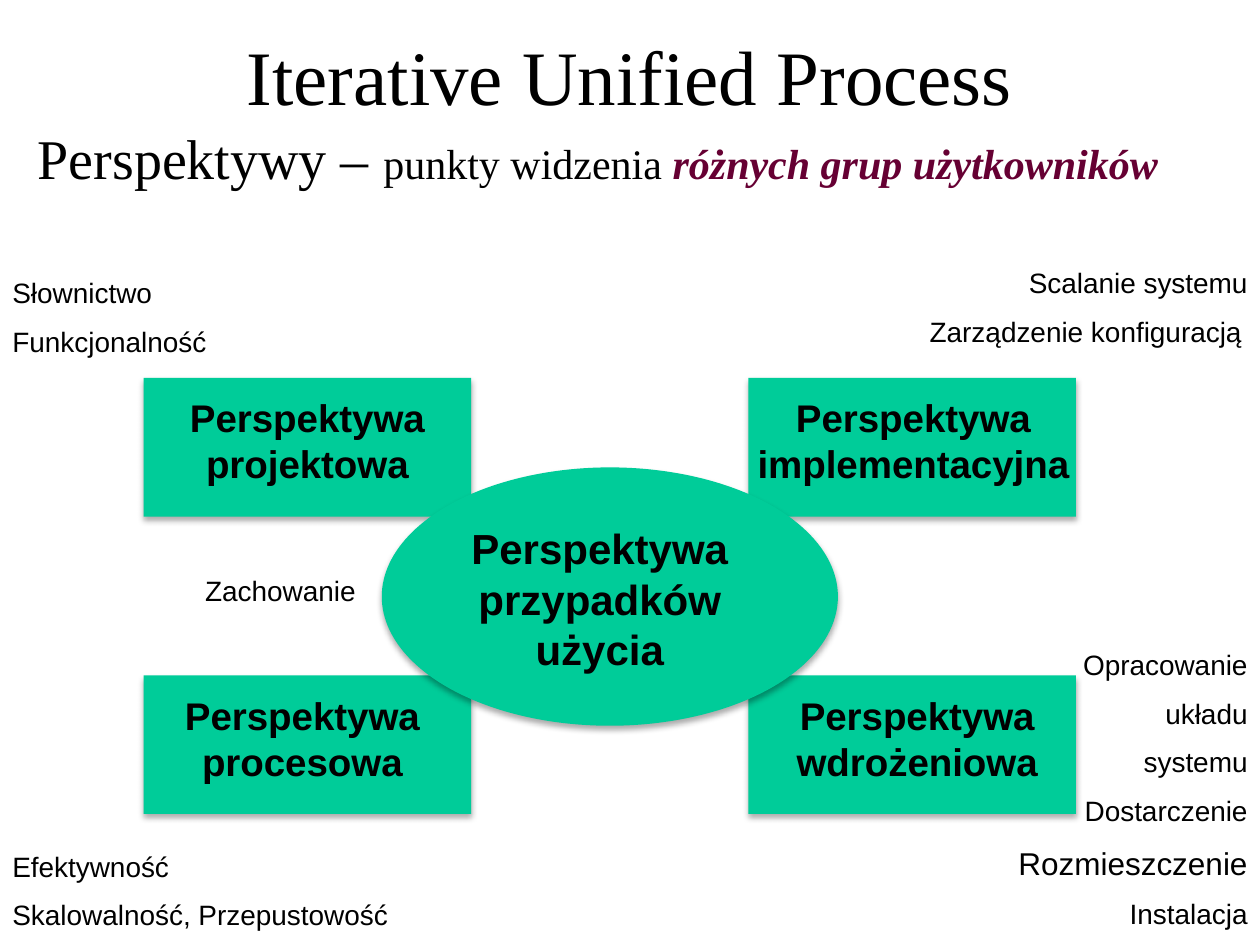
from dataclasses import dataclass

from lxml import etree
from pptx import Presentation
from pptx.dml.color import RGBColor
from pptx.enum.shapes import MSO_SHAPE
from pptx.enum.text import MSO_ANCHOR, PP_ALIGN
from pptx.oxml.ns import qn
from pptx.util import Inches, Pt

LEFT, CENTER, RIGHT = PP_ALIGN.LEFT, PP_ALIGN.CENTER, PP_ALIGN.RIGHT
TOP, MIDDLE = MSO_ANCHOR.TOP, MSO_ANCHOR.MIDDLE
RECT, OVAL = MSO_SHAPE.RECTANGLE, MSO_SHAPE.OVAL


@dataclass(frozen=True)
class Theme:
    """Colours, fonts and type sizes of the slide."""
    ink: RGBColor = RGBColor(0, 0, 0)
    accent: RGBColor = RGBColor(0x66, 0, 0x33)
    fill: RGBColor = RGBColor(0, 0xCC, 0x99)
    serif: str = "Times New Roman"
    sans: str = "Arial"
    title: int = 44
    heading: int = 32
    core: int = 24
    view: int = 22
    large_note: int = 18
    note: int = 16
    note_gap: float = 0.54


THEME = Theme()


def style_run(r, size, font=THEME.sans, color=THEME.ink, bold=False, italic=False):
    """Set the font of one run."""
    r.font.name, r.font.size = font, Pt(size)
    r.font.color.rgb = color
    r.font.bold, r.font.italic = bold, italic


def add_frame(s, box, anchor=TOP):
    """Add a wrapping text box and return its text frame."""
    tf = s.shapes.add_textbox(*map(Inches, box)).text_frame
    tf.word_wrap = True
    tf.vertical_anchor = anchor
    return tf


def add_title(s, box):
    """Place the centred slide title."""
    p = add_frame(s, box, MIDDLE).paragraphs[0]
    p.text = "Iterative Unified Process"
    p.alignment = CENTER
    style_run(p.runs[0], THEME.title, THEME.serif)


def add_subtitle(s, box):
    """Place the heading line with its emphasised ending."""
    p = add_frame(s, box).paragraphs[0]
    p.line_spacing = 0.9
    parts = [
        ("Perspektywy – ", THEME.heading, THEME.ink, False),
        ("punkty widzenia ", THEME.core, THEME.ink, False),
        ("różnych grup użytkowników", THEME.core, THEME.accent, True),
    ]
    for text, size, color, strong in parts:
        r = p.add_run()
        r.text = text
        style_run(r, size, THEME.serif, color, strong, strong)


def add_panel(s, kind, box):
    """Place a green shape with a soft shadow below it."""
    sp = s.shapes.add_shape(kind, *map(Inches, box))
    sp.shadow.inherit = False
    sp.fill.solid()
    sp.fill.fore_color.rgb = THEME.fill
    sp.line.fill.background()
    effects = sp._element.spPr.find(qn("a:effectLst"))
    shadow = etree.SubElement(effects, qn("a:outerShdw"), blurRad=str(Pt(3.5)),
                              dist=str(Pt(2.2)), dir="5400000", rotWithShape="0")
    color = etree.SubElement(shadow, qn("a:srgbClr"), val=str(THEME.ink))
    etree.SubElement(color, qn("a:alpha"), val="32000")


def add_label(s, box, text, size):
    """Place the bold centred name of a perspective."""
    p = add_frame(s, box).paragraphs[0]
    p.text = text
    p.alignment = CENTER
    style_run(p.runs[0], size, bold=True)


def add_diagram(s, box):
    """Place four perspectives at the corners and the use cases in the middle."""
    left, top, width, height = box
    w, h = 2.6, 1.1
    right, bottom = left + width - w, top + height - h
    for y in (top, bottom):
        for x in (left, right):
            add_panel(s, RECT, (x, y, w, h))
    add_panel(s, OVAL, (left + 1.89, top + 0.71, 3.62, 2.05))
    add_label(s, (left + 2.36, top + 1.1, 2.52, 1.3),
              "Perspektywa przypadków użycia", THEME.core)
    views = [
        ("projektowa", left + 0.08, top, 2.44),
        ("implementacyjna", right - 0.07, top, 2.76),
        ("procesowa", left, bottom, 2.52),
        ("wdrożeniowa", right + 0.16, bottom, 2.36),
    ]
    for name, x, y, label_w in views:
        add_label(s, (x, y + 0.08, label_w, 0.83), f"Perspektywa {name}", THEME.view)


def add_notes(s, box, lines, align=LEFT, last_align=None, large=()):
    """Place a spaced list of concerns, one paragraph a line."""
    tf = add_frame(s, box)
    tf.text = "\n".join(lines)
    for i, p in enumerate(tf.paragraphs):
        size = THEME.large_note if p.text in large else THEME.note
        p.alignment = align
        if i:
            p.space_before = Pt(round(THEME.note_gap * size, 1))
        style_run(p.runs[0], size)
    if last_align is not None:
        tf.paragraphs[-1].alignment = last_align


def main():
    """Build and save the slide."""
    prs = Presentation()
    prs.slide_width, prs.slide_height = Inches(10), Inches(7.5)
    s = prs.slides.add_slide(prs.slide_layouts[6])
    add_title(s, (0.5, -0.03, 9, 1.25))
    add_subtitle(s, (0.2, 0.99, 9.61, 0.63))
    add_diagram(s, (1.14, 3, 7.4, 3.46))
    add_notes(s, (7.28, 2.06, 2.72, 0.77),
              ["Scalanie systemu", "Zarządzenie konfiguracją"], RIGHT, LEFT)
    add_notes(s, (0, 2.14, 2.72, 0.77), ["Słownictwo", "Funkcjonalność"])
    add_notes(s, (0, 6.69, 3.27, 0.77),
              ["Efektywność", "Skalowalność, Przepustowość"])
    add_notes(s, (7.28, 5.09, 2.72, 2.42),
              ["Opracowanie", "układu", "systemu", "Dostarczenie",
               "Rozmieszczenie", "Instalacja"], RIGHT, large=("Rozmieszczenie",))
    add_notes(s, (1.53, 4.5, 1.46, 0.37), ["Zachowanie"])
    prs.save("out.pptx")


if __name__ == "__main__":
    main()
